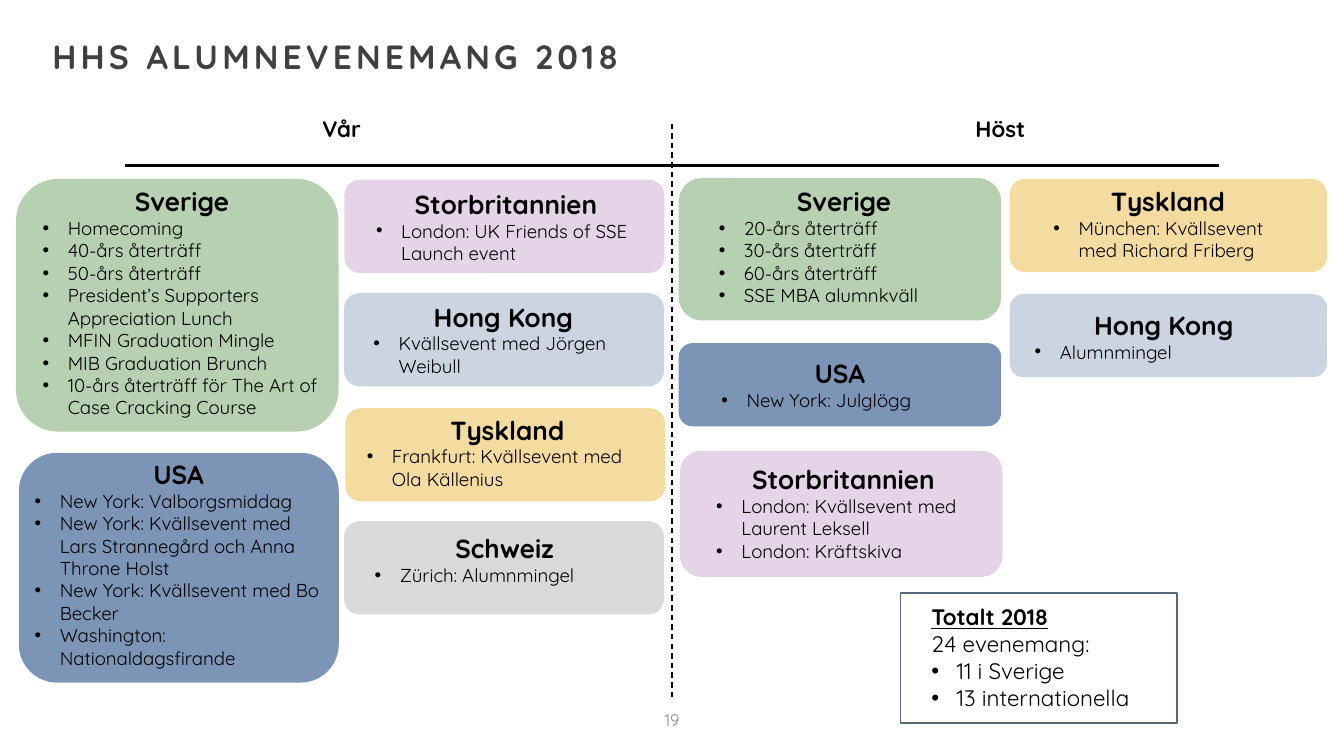
import pptx
import pptx.util
import pptx.dml.color
import pptx.enum.dml
import pptx.enum.shapes
import pptx.enum.text
import pptx.oxml.ns
from lxml import etree

Pt = pptx.util.Pt
ALIGN = pptx.enum.text.PP_ALIGN
ANCHOR = pptx.enum.text.MSO_ANCHOR
qn = pptx.oxml.ns.qn

GREEN, BLUE, PURPLE = "B6D0B1", "7C95B6", "E5D4E7"
PALE, YELLOW, GREY = "CBD5E2", "F4DBA0", "D9D9D9"

CARDS = [
    (GREEN, (8.6, 95.8, 172.8, 135.4), (15.8, 95.8, 163.4, 145.4), "Sverige",
     ["Homecoming", "40-års återträff", "50-års återträff",
      "President’s Supporters Appreciation Lunch", "MFIN Graduation Mingle",
      "MIB Graduation Brunch",
      "10-års återträff för The Art of Case Cracking Course"]),
    (BLUE, (10.1, 242.6, 171.4, 123.1), (11.5, 241.9, 168.5, 121), "USA",
     ["New York: Valborgsmiddag",
      "New York: Kvällsevent med Lars Strannegård och Anna Throne Holst",
      "New York: Kvällsevent med Bo Becker",
      "Washington: Nationaldagsfirande"]),
    (PURPLE, (184.5, 96.3, 171.4, 50), (194.4, 97.2, 153.4, 48.2),
     "Storbritannien", ["London: UK Friends of SSE Launch event"]),
    (PALE, (184.3, 157, 171.4, 50), (193, 157.7, 153.4, 48.2),
     "Hong Kong", ["Kvällsevent med Jörgen Weibull"]),
    (YELLOW, (185, 218.7, 171.4, 50), (189.4, 218.2, 164.9, 48.2),
     "Tyskland", ["Frankfurt: Kvällsevent med Ola Källenius"]),
    (GREY, (184.3, 279.2, 171.4, 50), (193.7, 281.5, 153.4, 36),
     "Schweiz", ["Zürich: Alumnmingel"]),
    (GREEN, (363.6, 95.4, 172.8, 76.3), (378, 95.8, 148.3, 72.7), "Sverige",
     ["20-års återträff", "30-års återträff", "60-års återträff",
      "SSE MBA alumnkväll"]),
    (BLUE, (363.6, 183.8, 172.8, 44.6), (379.4, 187.9, 141.1, 36),
     "USA", ["New York: Julglögg"]),
    (PURPLE, (364.3, 241.5, 172.8, 67.5), (376.6, 244.8, 150.5, 60.5),
     "Storbritannien",
     ["London: Kvällsevent med Laurent Leksell", "London: Kräftskiva"]),
    (YELLOW, (540.9, 95.8, 170, 50), (557.3, 95.8, 136.8, 48.2),
     "Tyskland", ["München: Kvällsevent med Richard Friberg"]),
    (PALE, (540.9, 157.5, 170, 44.6), (547.2, 162, 152.6, 36),
     "Hong Kong", ["Alumnmingel"]),
]


def rgb(color):
    return pptx.dml.color.RGBColor.from_string(color)


def add_run(p, text, size=10, color="000000", bold=False, underline=False,
            spacing=0):
    r = p.add_run()
    r.text = text
    r.font.name = "Quicksand"
    r.font.size = Pt(size)
    r.font.bold = bold
    r.font.underline = underline
    r.font.color.rgb = rgb(color)
    if spacing:
        r._r.get_or_add_rPr().set("spc", str(round(spacing * 100)))
    return r


class Slide:
    def __init__(self, prs):
        self.s = prs.slides.add_slide(prs.slide_layouts[1])

    def place(self, sp, box):
        sp.left, sp.top, sp.width, sp.height = map(Pt, box)

    def frame(self, sp, insets=(7.2, 3.6, 7.2, 3.6), anchor=ANCHOR.TOP):
        tf = sp.text_frame
        tf.word_wrap = True
        tf.auto_size = pptx.enum.text.MSO_AUTO_SIZE.NONE
        tf.vertical_anchor = anchor
        (tf.margin_left, tf.margin_top,
         tf.margin_right, tf.margin_bottom) = map(Pt, insets)
        return tf

    def paragraphs(self, tf, items):
        for i, (text, align, bullet, style) in enumerate(items):
            p = tf.paragraphs[0] if i == 0 else tf.add_paragraph()
            p.alignment = align
            p.space_before = Pt(0)
            pPr = p._p.get_or_add_pPr()
            indent = Pt(13.5) if bullet else 0
            pPr.set("marL", str(indent))
            pPr.set("indent", str(-indent))
            if bullet:
                etree.SubElement(pPr, qn("a:buFont")).set("typeface", "Arial")
                etree.SubElement(pPr, qn("a:buChar")).set("char", "•")
            else:
                etree.SubElement(pPr, qn("a:buNone"))
            add_run(p, text, **style)

    def title(self, text, box):
        sp = self.s.shapes.title
        self.place(sp, box)
        tf = self.frame(sp, (0, 0, 0, 0))
        style = dict(size=18, color="404040", bold=True, spacing=2.2)
        self.paragraphs(tf, [(text, ALIGN.LEFT, False, style)])
        tf.paragraphs[0].line_spacing = 0.9

    def label(self, text, box, align=ALIGN.LEFT, anchor=ANCHOR.TOP, **style):
        tf = self.frame(self.s.shapes.add_textbox(*map(Pt, box)), anchor=anchor)
        self.paragraphs(tf, [(text, align, False, style)])

    def card(self, color, box, text_box, heading, events):
        sp = self.s.shapes.add_shape(
            pptx.enum.shapes.MSO_SHAPE.ROUNDED_RECTANGLE, *map(Pt, box))
        sp.shadow.inherit = False
        sp.fill.solid()
        sp.fill.fore_color.rgb = rgb(color)
        sp.line.fill.background()
        tf = self.frame(self.s.shapes.add_textbox(*map(Pt, text_box)))
        self.paragraphs(
            tf, [(heading, ALIGN.CENTER, False, dict(size=14, bold=True))]
            + [(event, ALIGN.LEFT, True, {}) for event in events])

    def totals(self, heading, intro, items, box):
        sp = self.s.placeholders[1]
        self.place(sp, box)
        sp.fill.solid()
        sp.fill.fore_color.rgb = rgb("FFFFFF")
        sp.line.color.rgb = rgb("58697E")
        sp.line.width = Pt(1)
        tf = self.frame(sp, (16.6, 5.8, 3.6, 3.6))
        self.paragraphs(
            tf, [(heading, ALIGN.LEFT, False,
                  dict(size=12, bold=True, underline=True)),
                 (intro, ALIGN.LEFT, False, dict(size=12))]
            + [(item, ALIGN.LEFT, True, dict(size=12)) for item in items])

    def line(self, ends, width, dash=None):
        c = self.s.shapes.add_connector(
            pptx.enum.shapes.MSO_CONNECTOR.STRAIGHT, *map(Pt, ends))
        c.line.color.rgb = rgb("000000")
        c.line.width = Pt(width)
        if dash:
            c.line.dash_style = dash
        etree.SubElement(c._element.spPr, qn("a:effectLst"))


def main():
    prs = pptx.Presentation()
    prs.slide_width, prs.slide_height = Pt(720), Pt(405)
    slide = Slide(prs)
    slide.title("HHS ALUMNEVENEMANG 2018", (28.1, 21.6, 663.8, 41.8))
    slide.label("Vår", (165.6, 58.3, 38.2, 21.6), size=12, bold=True)
    slide.label("Höst", (515.5, 58.3, 43.2, 21.6), size=12, bold=True)
    slide.line((67, 88.6, 653, 88.6), 1.5)
    slide.line((360, 66.2, 360, 375), 0.75, pptx.enum.dml.MSO_LINE.DASH)
    for card in CARDS:
        slide.card(*card)
    slide.totals("Totalt 2018", "24 evenemang:",
                 ["11 i Sverige", "13 internationella"],
                 (482.4, 317.5, 148.3, 69.8))
    slide.label("19", (338.4, 375, 43.2, 21.6), ALIGN.CENTER, ANCHOR.MIDDLE,
                size=9, color="8C8C8C")
    prs.save("out.pptx")


if __name__ == "__main__":
    main()
